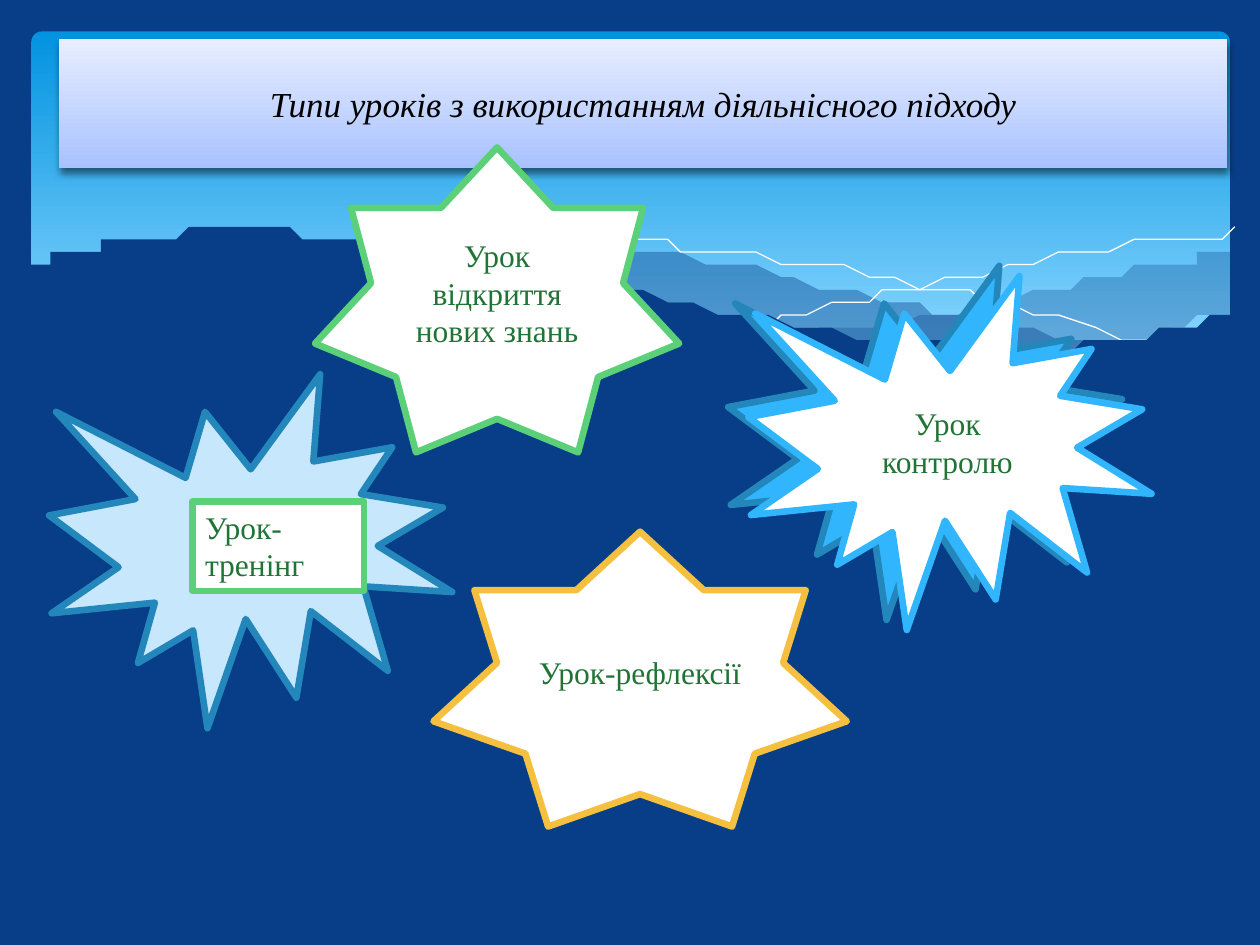
from dataclasses import dataclass
from typing import Optional

from lxml.etree import SubElement
from pptx import Presentation
from pptx.dml.color import RGBColor
from pptx.enum.shapes import MSO_SHAPE
from pptx.enum.text import MSO_ANCHOR, PP_ALIGN
from pptx.oxml.ns import qn
from pptx.util import Inches, Pt

COLS, ROWS = 100, 75
FONT = "Times New Roman"
COLORS = {
    "navy": "073E87", "sky_top": "0293E0", "sky_low": "83D3FE",
    "title_top": "E8EEFF", "title_low": "A9C2FF", "black": "000000",
    "white": "FFFFFF", "pale": "C6E7FC", "steel": "2487BB",
    "azure": "31B6FD", "green": "5BD078", "amber": "F5C040", "text": "217436",
}
Point = tuple[float, float]


@dataclass
class Box:
    """Position and size in grid columns and rows."""
    col: float
    row: float
    cols: float
    rows: float


@dataclass
class Badge:
    kind: MSO_SHAPE
    box: Box
    fill: str
    line: str
    text: str = ""
    centred: bool = True


@dataclass
class Wave:
    """A smooth upper edge, a smooth lower edge, and how they are painted."""
    edge: list[Point]
    back: list[Point]
    alpha: Optional[int] = None
    filled: bool = True


WAVES = [
    Wave([(66.1, 26.5), (73, 25.3), (80.5, 23.7), (87.6, 21.9), (93.5, 20.7), (97.6, 19.9)],
         [(97.6, 24.7), (93.5, 26.1), (89, 27.2), (84.4, 27.7), (79.2, 27.75),
          (73.2, 27.4), (66.1, 26.5)], 29),
    Wave([(28.6, 19.1), (32.8, 18.7), (38, 18.6), (44.2, 18.9), (51.4, 19.8),
          (58.4, 21.1), (66.8, 23.1), (74.1, 24.8), (80.7, 26), (89.3, 27.3)],
         [(89.3, 27.3), (84.8, 27.7), (79.6, 27.8), (73.6, 27.5), (66.5, 26.6),
          (58.4, 25.2), (49.1, 23.2), (42.7, 21.6), (36.2, 20.3), (28.6, 19.1)], 40),
    Wave([(30.9, 19.5), (35.3, 18.9), (41.6, 18.7), (48.9, 19), (55.6, 19.7),
          (63.6, 20.8), (72.7, 22.6), (79.5, 24.1), (90.7, 27.2)], [], filled=False),
    Wave([(61.3, 25.7), (67.2, 24.1), (74.8, 22.3), (83.6, 20.4), (91, 19.2), (97.5, 18.5)],
         [], filled=False),
    Wave([(2.3, 21.3), (4, 20.5), (7.5, 19.5), (11.9, 18.7), (17.7, 18.4), (23, 18.5),
          (31.5, 19.4), (41.8, 21.3), (52.9, 23.9), (62.6, 25.8), (70.8, 27),
          (77.8, 27.6), (83.7, 27.6), (88.7, 27.1), (93, 26.2), (97.7, 24.6)],
         [(97.7, 32.9), (2.3, 32.9)]),
]

BADGES = [
    Badge(MSO_SHAPE.EXPLOSION1, Box(3.9, 29.7, 32, 28.1), "pale", "steel"),
    Badge(MSO_SHAPE.STAR_7_POINT, Box(25, 11.7, 28.9, 24.2), "white", "green",
          "Урок відкриття нових знань"),
    Badge(MSO_SHAPE.STAR_7_POINT, Box(34.4, 42.2, 32.8, 23.4), "white", "amber",
          "Урок-рефлексії"),
    Badge(MSO_SHAPE.EXPLOSION1, Box(57.8, 21.1, 32, 28.1), "azure", "steel"),
    Badge(MSO_SHAPE.EXPLOSION1, Box(59.4, 21.9, 32, 28.1), "white", "azure",
          "Урок контролю"),
    Badge(MSO_SHAPE.RECTANGLE, Box(15.3, 39.8, 13.6, 7.1), "white", "green",
          "Урок-тренінг", centred=False),
]


def rgb(name: str) -> RGBColor:
    return RGBColor.from_string(COLORS[name])


def smooth(points: list[Point], steps: int = 5) -> list[Point]:
    """Catmull-Rom curve through the points."""
    if len(points) < 3:
        return points
    padded = [points[0], *points, points[-1]]
    curve = [points[0]]
    for a, b, c, d in zip(padded, padded[1:], padded[2:], padded[3:]):
        for i in range(1, steps + 1):
            t = i / steps
            curve.append(tuple(
                q + t / 2 * (r - p + t * (2 * p - 5 * q + 4 * r - s
                                          + t * (3 * (q - r) + s - p)))
                for p, q, r, s in zip(a, b, c, d)))
    return curve


def add_shape(slide, unit: float, kind: MSO_SHAPE, box: Box):
    sp = slide.shapes.add_shape(kind, *(
        round(v * unit) for v in (box.col, box.row, box.cols, box.rows)))
    sp.shadow.inherit = False
    return sp


def fill_down(sp, top: str, low: str, end: float = 1) -> None:
    """Vertical gradient from top to low."""
    sp.fill.gradient()
    sp.fill.gradient_angle = 270
    first, last = sp.fill.gradient_stops
    first.color.rgb, last.color.rgb = rgb(top), rgb(low)
    first.position, last.position = 0, end
    sp.line.fill.background()


def write(sp, text: str, centred: bool = True, **font) -> None:
    tf = sp.text_frame
    tf.word_wrap = True
    tf.vertical_anchor = MSO_ANCHOR.MIDDLE if centred else MSO_ANCHOR.TOP
    p = tf.paragraphs[0]
    p.alignment = PP_ALIGN.CENTER if centred else PP_ALIGN.LEFT
    r = p.add_run()
    r.text = text
    color = font.pop("color")
    r.font.color.rgb = rgb(color)
    for name, value in {"name": FONT, **font}.items():
        setattr(r.font, name, value)


def add_wave(slide, unit: float, wave: Wave) -> None:
    points = smooth(wave.edge) + smooth(wave.back)
    builder = slide.shapes.build_freeform(*points[0], scale=unit)
    builder.add_line_segments(points[1:], close=wave.filled)
    sp = builder.convert_to_shape()
    sp.shadow.inherit = False
    if not wave.filled:
        sp.fill.background()
        sp.line.color.rgb = rgb("white")
        sp.line.width = Pt(0)
        return
    sp.fill.solid()
    sp.fill.fore_color.rgb = rgb("navy")
    sp.line.fill.background()
    if wave.alpha is not None:
        color = sp._element.spPr.find(qn("a:solidFill")).find(qn("a:srgbClr"))
        SubElement(color, qn("a:alpha"), val=str(wave.alpha * 1000))


def add_title(slide, unit: float) -> None:
    sp = add_shape(slide, unit, MSO_SHAPE.RECTANGLE, Box(4.7, 3.1, 92.7, 10.2))
    fill_down(sp, "title_top", "title_low")
    effects = sp._element.spPr.find(qn("a:effectLst"))
    shadow = SubElement(effects, qn("a:outerShdw"), blurRad="50800",
                        dist="38100", dir="5400000", rotWithShape="0")
    color = SubElement(shadow, qn("a:srgbClr"), val=COLORS["black"])
    SubElement(color, qn("a:alpha"), val="50000")
    write(sp, "Типи уроків з використанням діяльнісного підходу",
          size=Pt(20), italic=True, color="black")


def add_badge(slide, unit: float, badge: Badge) -> None:
    sp = add_shape(slide, unit, badge.kind, badge.box)
    sp.fill.solid()
    sp.fill.fore_color.rgb = rgb(badge.fill)
    sp.line.color.rgb = rgb(badge.line)
    sp.line.width = Pt(3.78)
    SubElement(sp._element.spPr.find(qn("a:ln")), qn("a:round"))
    if badge.text:
        write(sp, badge.text, badge.centred, size=Pt(18), color="text")


def main() -> None:
    prs = Presentation()
    prs.slide_width, prs.slide_height = Inches(10), Inches(7.5)
    unit = prs.slide_width / COLS
    s = prs.slides.add_slide(prs.slide_layouts[6])
    s.background.fill.solid()
    s.background.fill.fore_color.rgb = rgb("navy")

    sky = add_shape(s, unit, MSO_SHAPE.ROUNDED_RECTANGLE, Box(2.5, 2.5, 95.1, 27))
    sky.adjustments[0] = 0.03
    fill_down(sky, "sky_top", "sky_low", 0.9)
    for wave in WAVES:
        add_wave(s, unit, wave)
    add_title(s, unit)
    for badge in BADGES:
        add_badge(s, unit, badge)
    prs.save("out.pptx")


if __name__ == "__main__":
    main()
